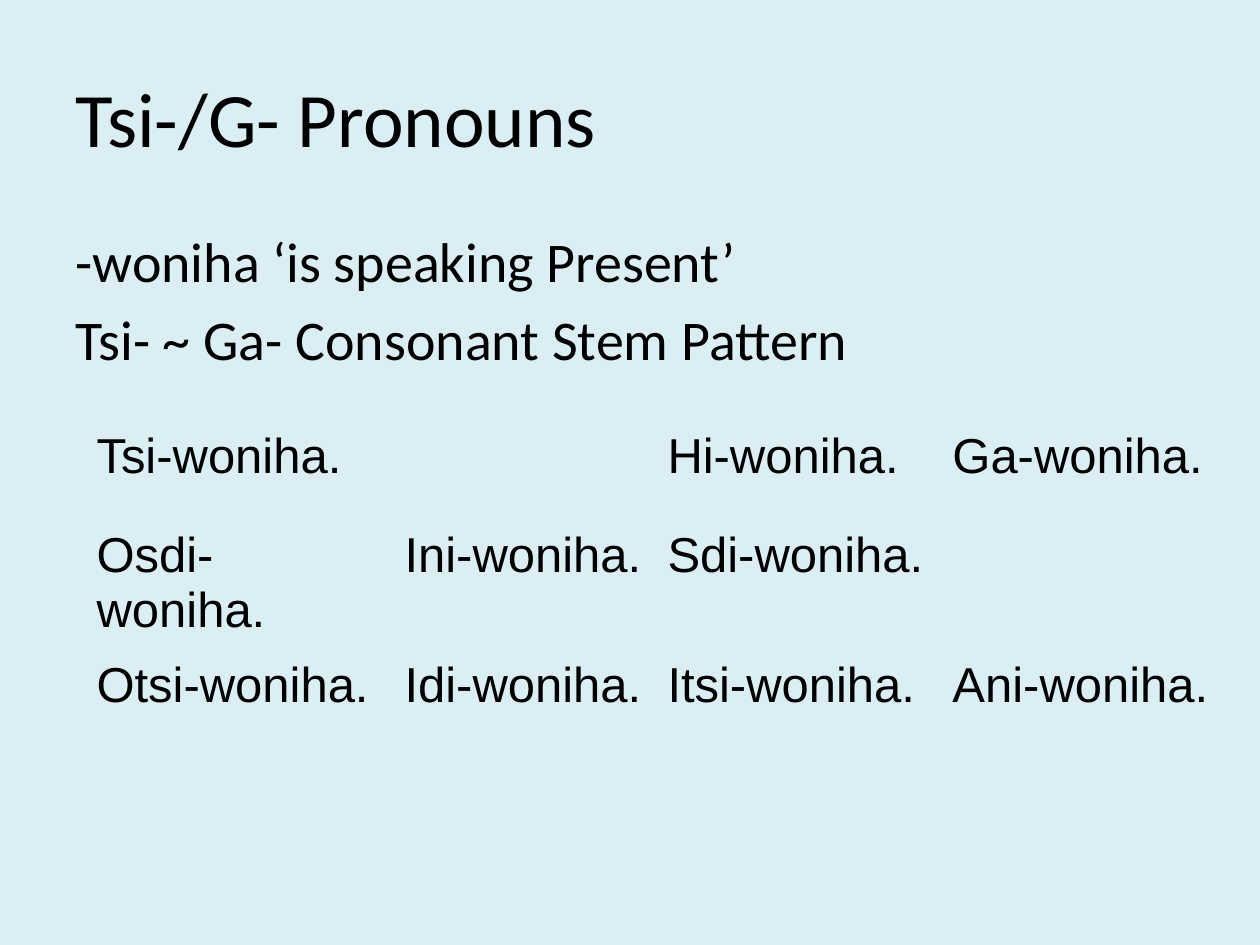
"""Build the slide on Tsi-/G- pronouns with its table of consonant stem forms."""
from dataclasses import dataclass

from pptx import Presentation
from pptx import util as u
from pptx.dml import color
from pptx.enum import text

PX = 914400 / 126
COLORS = {"background": "DBEEF4", "ink": "000000"}
PLAIN_TABLE = "{2D5ABB26-0587-4C30-8999-92F81FD0307C}"


@dataclass(frozen=True)
class TextBlock:
    left: int
    top: int
    width: int
    height: int
    lines: tuple[str, ...]
    size: int
    anchor: text.MSO_ANCHOR
    space_before: float = 0


@dataclass(frozen=True)
class Grid:
    left: int
    top: int
    columns: tuple[int, ...]
    row_height: int
    prefixes: tuple[tuple[str, ...], ...]
    stem: str
    size: int


BLOCKS = (
    TextBlock(63, 38, 1134, 157, ("Tsi-/G- Pronouns",), 44, text.MSO_ANCHOR.MIDDLE),
    TextBlock(63, 220, 1134, 624,
              ("-woniha ‘is speaking Present’", "Tsi- ~ Ga- Consonant Stem Pattern"),
              32, text.MSO_ANCHOR.TOP, 6.4),
)
FORMS = Grid(
    84, 423, (308, 263, 285, 285), 99,
    (("Tsi", "", "Hi", "Ga"), ("Osdi", "Ini", "Sdi", ""), ("Otsi", "Idi", "Itsi", "Ani")),
    "-woniha.", 28,
)


def px(length: int) -> u.Emu:
    return u.Emu(round(length * PX))


def add_span(para, words: str, font: str, size: int) -> None:
    span = para.add_run()
    span.text = words
    span.font.name = font
    span.font.size = u.Pt(size)
    span.font.color.rgb = color.RGBColor.from_string(COLORS["ink"])


def draw_block(page, block: TextBlock) -> None:
    box = page.shapes.add_textbox(px(block.left), px(block.top), px(block.width), px(block.height))
    frame = box.text_frame
    frame.word_wrap = True
    frame.vertical_anchor = block.anchor
    for index, line in enumerate(block.lines):
        para = frame.add_paragraph() if index else frame.paragraphs[0]
        para.space_before = u.Pt(block.space_before)
        add_span(para, line, "Calibri", block.size)


def draw_grid(page, grid: Grid) -> None:
    row_count = len(grid.prefixes)
    holder = page.shapes.add_table(
        row_count, len(grid.columns), px(grid.left), px(grid.top),
        px(sum(grid.columns)), px(grid.row_height * row_count))
    table = holder.table
    table.first_row = table.horz_banding = False
    table._tbl.tblPr.find("{*}tableStyleId").text = PLAIN_TABLE
    for column, width in zip(table.columns, grid.columns):
        column.width = px(width)
    for row, prefixes in zip(table.rows, grid.prefixes):
        row.height = px(grid.row_height)
        for cell, prefix in zip(row.cells, prefixes):
            cell.fill.background()
            if prefix:
                add_span(cell.text_frame.paragraphs[0], prefix + grid.stem, "Arial", grid.size)


def main() -> None:
    deck = Presentation()
    deck.slide_width, deck.slide_height = px(1260), px(945)
    page = deck.slides.add_slide(deck.slide_layouts[6])
    page.background.fill.solid()
    page.background.fill.fore_color.rgb = color.RGBColor.from_string(COLORS["background"])
    for block in BLOCKS:
        draw_block(page, block)
    draw_grid(page, FORMS)
    deck.save("out.pptx")


if __name__ == "__main__":
    main()
